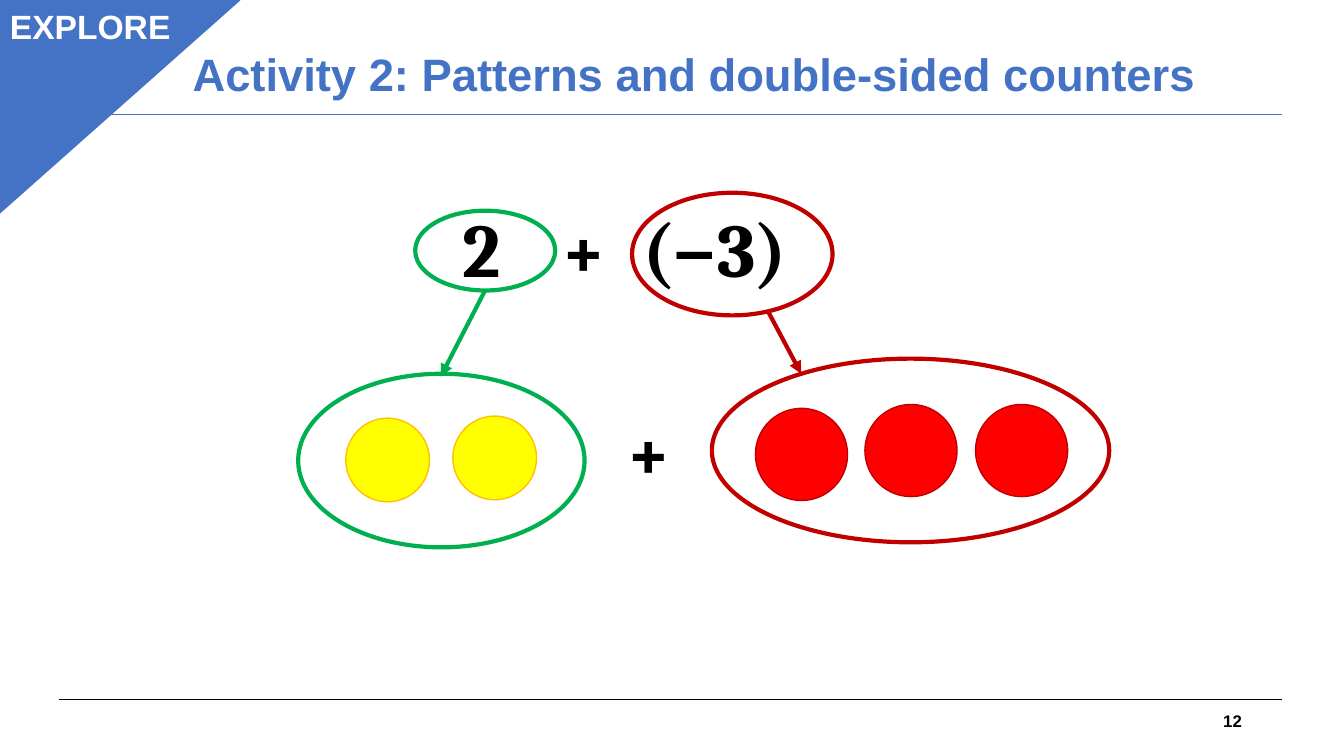
from dataclasses import dataclass

from lxml.etree import SubElement
from pptx import Presentation
from pptx.dml.color import RGBColor
from pptx.enum.shapes import MSO_CONNECTOR as Link, MSO_SHAPE as Kind
from pptx.enum.text import MSO_ANCHOR as Anchor, PP_ALIGN as Align
from pptx.oxml.ns import qn
from pptx.util import Pt

BLUE, BLACK, WHITE = "4472C4", "000000", "FFFFFF"
GREEN, CRIMSON = "00B050", "C00000"
YELLOW, AMBER, RED = "FFFF00", "FFC000", "FF0000"


@dataclass
class Box:
    left: float
    top: float
    width: float
    height: float

    def points(self) -> tuple:
        return tuple(map(Pt, (self.left, self.top, self.width, self.height)))


@dataclass
class Arrow:
    x1: float
    y1: float
    x2: float
    y2: float


@dataclass
class Team:
    color: str
    fill: str
    edge: str
    size: float
    spots: list
    rings: list
    arrow: Arrow


@dataclass
class Term:
    text: str
    box: Box


TEAMS = [
    Team(GREEN, YELLOW, AMBER, 59.8, [(247, 298.7), (323.5, 297.2)],
         [Box(213, 267, 204.6, 124), Box(296.6, 150.5, 100, 57)],
         Arrow(346.5, 207.5, 314.8, 269)),
    Team(CRIMSON, RED, CRIMSON, 65.8, [(539.6, 291.7), (617.8, 288.9), (696.8, 288.9)],
         [Box(451.5, 137.7, 143.2, 87.6), Box(508.5, 256.2, 283.8, 131.2)],
         Arrow(548, 221.3, 572.3, 267)),
]

TERMS = [
    Term("2", Box(323.5, 141, 60, 73)),
    Term("+", Box(394, 141, 58, 73)),
    Term("(−3)", Box(451.5, 141, 120, 73)),
    Term("+", Box(440.6, 285.3, 58, 73)),
]


def paint(target, color: str) -> None:
    target.rgb = RGBColor.from_string(color)


def write(shape, text: str, size: float, color: str, font: str = "Arial",
          align=Align.LEFT, anchor=Anchor.TOP, wrap: bool = False):
    frame = shape.text_frame
    frame.word_wrap = wrap
    frame.vertical_anchor = anchor
    para = frame.paragraphs[0]
    para.alignment = align
    run = para.add_run()
    run.text = text
    run.font.name = font
    run.font.size = Pt(size)
    run.font.bold = True
    paint(run.font.color, color)
    return para


def draw(shapes, kind, box: Box, edge: str, weight: float, fill: str = ""):
    shape = shapes.add_shape(kind, *box.points())
    shape.shadow.inherit = False
    if fill:
        shape.fill.solid()
        paint(shape.fill.fore_color, fill)
    else:
        shape.fill.background()
    paint(shape.line.color, edge)
    shape.line.width = Pt(weight)
    return shape


def join(shapes, way: Arrow, color: str, weight: float, head: bool = False) -> None:
    ends = map(Pt, (way.x1, way.y1, way.x2, way.y2))
    line = shapes.add_connector(Link.STRAIGHT, *ends)
    paint(line.line.color, color)
    line.line.width = Pt(weight)
    if head:
        SubElement(line.line._get_or_add_ln(), qn("a:tailEnd"), type="triangle")
    SubElement(line._element.spPr, qn("a:effectLst"))


def gather(shapes, team: Team) -> None:
    group = shapes.add_group_shape().shapes
    for left, top in team.spots:
        disc = Box(left, top, team.size, team.size)
        draw(group, Kind.OVAL, disc, team.edge, 1, team.fill)
    for ring in team.rings:
        draw(group, Kind.OVAL, ring, team.color, 3)
    join(group, team.arrow, team.color, 3, head=True)


def main() -> None:
    deck = Presentation()
    deck.slide_width, deck.slide_height = Pt(960), Pt(540)
    slide = deck.slides.add_slide(deck.slide_layouts[5])
    shapes = slide.shapes

    join(shapes, Arrow(42.5, 499.7, 915.8, 499.7), BLACK, 1.25)
    join(shapes, Arrow(42.5, 82, 915.8, 82), BLUE, 0.75)

    page = shapes.add_textbox(*Box(678.2, 500.4, 216, 28.8).points())
    write(page, "12", 12, BLACK, align=Align.RIGHT, anchor=Anchor.MIDDLE, wrap=True)

    corner = draw(shapes, Kind.ISOSCELES_TRIANGLE, Box(-0.7, 0, 172, 152.6), BLUE, 1, BLUE)
    corner.adjustments[0] = 0
    corner._element.spPr.xfrm.set("flipV", "1")
    badge = draw(shapes, Kind.RECTANGLE, Box(-0.7, 0.7, 130.3, 36), BLUE, 0.75, BLUE)
    write(badge, "EXPLORE", 24, WHITE, align=Align.CENTER)

    title = shapes.title
    title.left, title.top, title.width, title.height = Box(130.3, 15.1, 738.7, 80).points()
    para = write(title, "Activity 2: Patterns and double-sided counters", 32.4, BLUE,
                 anchor=Anchor.MIDDLE, wrap=True)
    para.line_spacing = 0.9

    for team in TEAMS:
        gather(shapes, team)
    for term in TERMS:
        write(shapes.add_textbox(*term.box.points()), term.text, 54, BLACK, "Cambria")

    deck.save("out.pptx")


if __name__ == "__main__":
    main()
